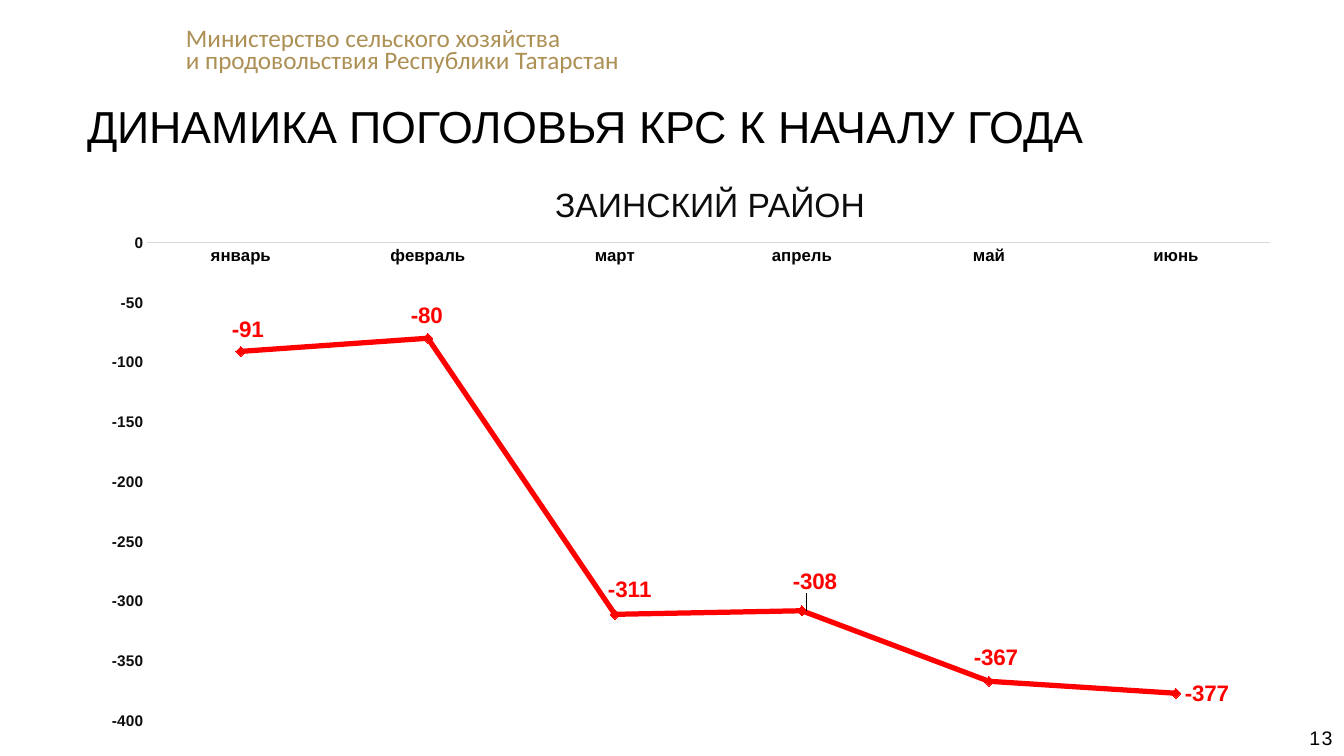
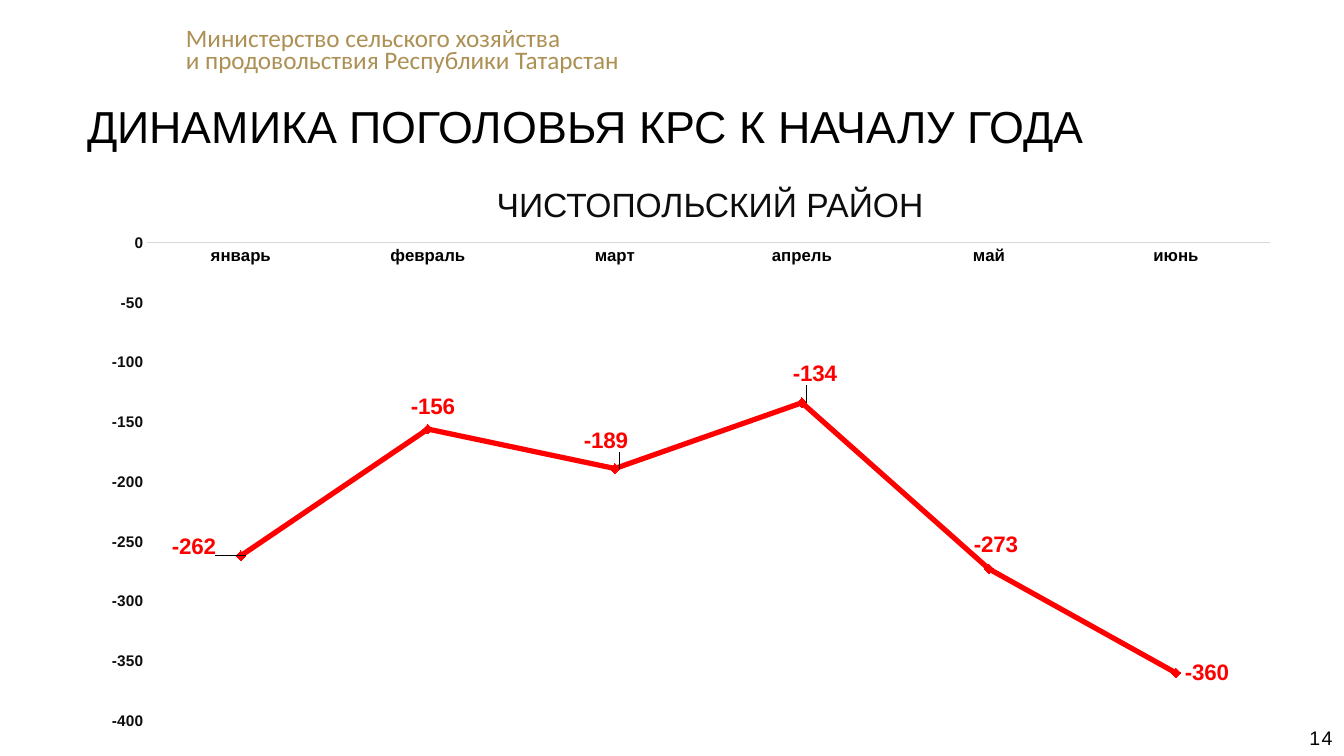
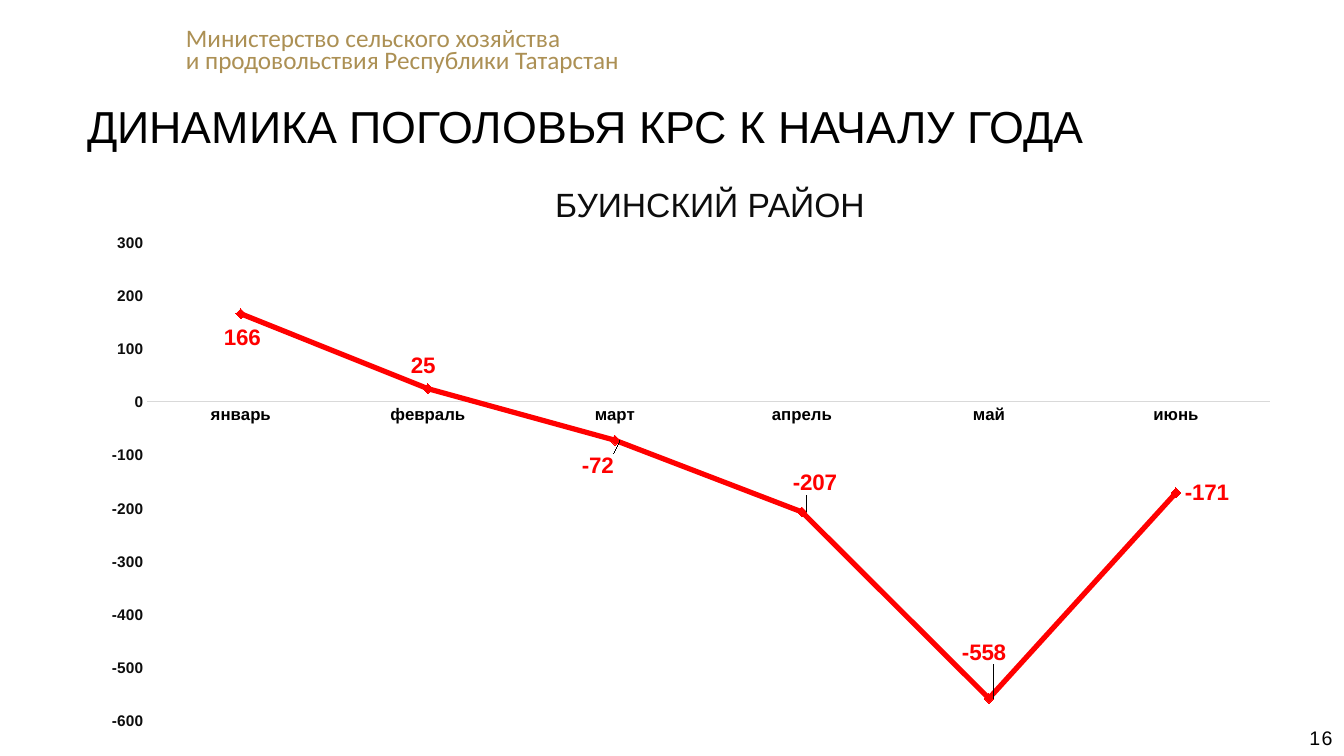
from dataclasses import dataclass

from lxml import etree
from pptx import Presentation
from pptx.chart.data import CategoryChartData
from pptx.dml.color import RGBColor
from pptx.enum.chart import (XL_CHART_TYPE, XL_LABEL_POSITION, XL_MARKER_STYLE,
                             XL_TICK_MARK)
from pptx.enum.text import MSO_ANCHOR, MSO_AUTO_SIZE, PP_ALIGN
from pptx.oxml.ns import qn
from pptx.util import Emu, Pt

LINE = XL_CHART_TYPE.LINE_MARKERS
RIGHT = XL_LABEL_POSITION.RIGHT
DIAMOND = XL_MARKER_STYLE.DIAMOND
NO_TICK = XL_TICK_MARK.NONE
TOP = MSO_ANCHOR.TOP
NO_FIT = MSO_AUTO_SIZE.NONE
LEFT, CENTER = PP_ALIGN.LEFT, PP_ALIGN.CENTER


@dataclass(frozen=True)
class Theme:
    gold: str = "AC9054"
    black: str = "000000"
    dark: str = "0D0D0D"
    grey: str = "D9D9D9"
    red: str = "FF0000"
    font: str = "Arial"
    alt: str = "Calibri"
    title: int = 32
    area: int = 24
    head: int = 18
    label: int = 16
    page: int = 14
    month: int = 12
    scale: int = 11
    base: int = 10


THEME = Theme()
PX = 914400 / 100.8
WIDTH, HEIGHT = 1344, 756
CHART = (85, 231, 1199, 505)
PLOT = {"x": 0.052, "y": 0.023, "w": 0.936, "h": 0.947}
INDENT = 29

HEAD = ["Министерство сельского хозяйства",
        "и продовольствия Республики Татарстан"]
TITLE = "ДИНАМИКА ПОГОЛОВЬЯ КРС К НАЧАЛУ ГОДА"
MONTHS = ["январь", "февраль", "март", "апрель", "май", "июнь"]
# Label shifts in px from the place right of the point, by month
SHIFTS = {0: (-18, -22), 1: (-26, -23), 2: (-16, -25), 3: (-18, -29),
          4: (-24, -24)}

# Page, district, values, axis (low, high, step), own label shifts
AREAS = [
    (13, "ЗАИНСКИЙ РАЙОН", [-91, -80, -311, -308, -367, -377],
     (-400, 0, 50), {}),
    (14, "ЧИСТОПОЛЬСКИЙ РАЙОН", [-262, -156, -189, -134, -273, -360],
     (-400, 0, 50), {0: (-78, -9), 2: (-40, -28)}),
    (16, "БУИНСКИЙ РАЙОН", [166, 25, -72, -207, -558, -171],
     (-600, 300, 100), {0: (-26, 24), 2: (-42, 25), 4: (-36, -46)}),
]


def px(num):
    return Emu(round(num * PX))


def color(code):
    return RGBColor.from_string(code)


def style(font, size, code, name=THEME.font, bold=False):
    font.size, font.name, font.bold = Pt(size), name, bold
    font.color.rgb = color(code)


def write(shape, lines, size, code, name=THEME.font, align=LEFT, wrap=True,
          pad=None, space=None, track=None):
    """Fill a shape with lines; pad is the left inset, track the letter gap."""
    frame = shape.text_frame
    frame.text = "\n".join(lines)
    frame.word_wrap, frame.auto_size = wrap, NO_FIT
    frame.vertical_anchor = TOP
    if pad is not None:
        frame.margin_left = px(pad)
    for para in frame.paragraphs:
        para.alignment = align
        if space:
            para.line_spacing = space
        for run in para.runs:
            style(run.font, size, code, name)
            if track:
                run.font._element.set("spc", str(track))


def box(slide, area):
    return slide.shapes.add_textbox(*map(px, area))


def layout_xml(parts):
    """Make a manual chart layout from pairs of tag and value."""
    root = etree.Element(qn("c:layout"))
    manual = etree.SubElement(root, qn("c:manualLayout"))
    for tag, val in parts.items():
        etree.SubElement(manual, qn("c:" + tag)).set("val", str(val))
    return root


def set_plot(chart):
    plot = chart._chartSpace.find(".//" + qn("c:plotArea"))
    for old in plot.findall(qn("c:layout")):
        plot.remove(old)
    plot.insert(0, layout_xml({"layoutTarget": "inner", "xMode": "edge",
                               "yMode": "edge", **PLOT}))


def set_axes(chart, low, high, step):
    months, scale = chart.category_axis, chart.value_axis
    for axis, size, code in ((months, THEME.month, THEME.black),
                             (scale, THEME.scale, THEME.dark)):
        axis.has_major_gridlines = False
        axis.major_tick_mark = axis.minor_tick_mark = NO_TICK
        style(axis.tick_labels.font, size, code, bold=True)
    months.format.line.color.rgb = color(THEME.grey)
    months.format.line.width = Pt(0.75)
    scale.format.line.fill.background()
    scale.minimum_scale, scale.maximum_scale = low, high
    scale.major_unit = step


def set_labels(line, shifts):
    labels = line.data_labels
    labels.show_value, labels.position = True, RIGHT
    style(labels.font, THEME.label, THEME.red, bold=True)
    for month in shifts:
        label = line.points[month].data_label
        label.position = RIGHT
        style(label.font, THEME.label, THEME.red, bold=True)
    tags = line._element.xpath("c:dLbls/c:dLbl")
    for tag, (left, top) in zip(tags, shifts.values()):
        tag[0].addnext(layout_xml({"x": round(left / CHART[2], 4),
                                   "y": round(top / CHART[3], 4)}))


def add_chart(slide, vals, span, shifts):
    data = CategoryChartData()
    data.categories = MONTHS
    data.add_series("Series 1", vals)
    chart = slide.shapes.add_chart(LINE, *map(px, CHART), data).chart
    chart.has_title = chart.has_legend = False
    style(chart.font, THEME.base, THEME.black, THEME.alt)
    set_plot(chart)
    set_axes(chart, *span)
    chart.plots[0].vary_by_categories = False
    line = chart.plots[0].series[0]
    line.smooth = False
    line.format.line.color.rgb = color(THEME.red)
    line.format.line.width = Pt(3.75)
    mark = line.marker
    mark.style, mark.size = DIAMOND, 7
    mark.format.fill.solid()
    mark.format.fill.fore_color.rgb = color(THEME.red)
    mark.format.line.color.rgb = color(THEME.red)
    set_labels(line, shifts)


def set_layout(layout):
    """Place the shared title and drop the unused footer placeholders."""
    for holder in list(layout.placeholders):
        if holder.placeholder_format.idx:
            layout.shapes.element.remove(holder.element)
        else:
            holder.left, holder.top = px(58), px(94)
            holder.width, holder.height = px(1285), px(65)


def add_head(slide, layout):
    """Make the ministry name and move it to the shared layout."""
    head = box(slide, (176, 26, 459, 54))
    write(head, HEAD, THEME.head, THEME.gold, name=THEME.alt, wrap=False,
          space=0.7)
    layout.shapes.element.append(head.element)


def add_page(slide, page):
    mark = box(slide, (1308, 726, 26, 23))
    frame = mark.text_frame
    frame.margin_right = frame.margin_top = frame.margin_bottom = 0
    write(mark, [str(page)], THEME.page, THEME.black, align=CENTER,
          wrap=False, pad=0, track=100)


def main():
    deck = Presentation()
    deck.slide_width, deck.slide_height = px(WIDTH), px(HEIGHT)
    layout = deck.slide_layouts[5]
    set_layout(layout)
    for page, name, vals, span, own in AREAS:
        slide = deck.slides.add_slide(layout)
        if len(deck.slides) == 1:
            add_head(slide, layout)
        write(slide.shapes.title, [TITLE], THEME.title, THEME.black,
              pad=INDENT)
        add_page(slide, page)
        add_chart(slide, vals, span, {**SHIFTS, **own})
        write(box(slide, (58, 179, 1285, 50)), [name], THEME.area, THEME.dark,
              align=CENTER, pad=INDENT)
    deck.save("out.pptx")


if __name__ == "__main__":
    main()
